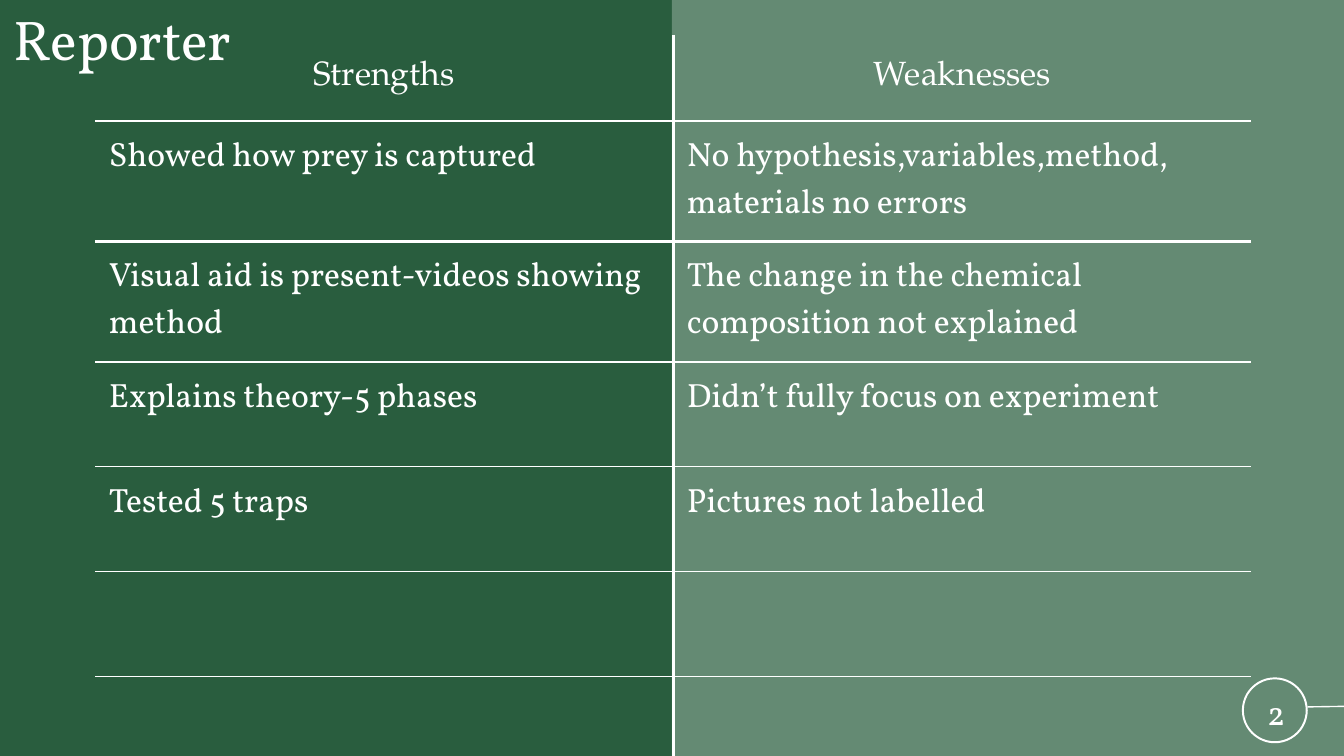
import dataclasses

import pptx
import pptx.dml.color
import pptx.enum.shapes
import pptx.enum.text
import pptx.oxml
import pptx.oxml.ns
import pptx.util

Inches = pptx.util.Inches
Pt = pptx.util.Pt
ALIGN = pptx.enum.text.PP_ALIGN
ANCHOR = pptx.enum.text.MSO_ANCHOR
SHAPE = pptx.enum.shapes.MSO_SHAPE
NAMESPACE = pptx.oxml.ns.nsdecls("a")


@dataclasses.dataclass(frozen=True)
class Theme:
    green: str = "295D3E"
    white: str = "FFFFFF"
    panel_opacity: int = 28
    body_font: str = "Vollkorn"
    header_font: str = "TeX Gyre Pagella"
    title_size: int = 30
    body_size: int = 18
    thin: float = 0.75
    thick: float = 1.5
    inset: float = 0.1


THEME = Theme()

HEADINGS = ("Strengths", "Weaknesses")
FINDINGS = (
    ("Showed how prey is captured", "No hypothesis,variables,method, materials no errors"),
    ("Visual aid is present-videos showing method",
     "The change in the chemical composition not explained"),
    ("Explains theory-5 phases", "Didn’t fully focus on experiment"),
    ("Tested 5 traps", "Pictures not labelled"),
    ("", ""),
    ("", ""),
)
ROW_HEIGHTS = (0.64, 0.49, 0.49, 0.78, 0.78, 0.78, 0.78)
# Width of the rule under each row.
ROW_RULES = (THEME.thick, THEME.thick, *[THEME.thin] * 5)


def color(value):
    return pptx.dml.color.RGBColor.from_string(value)


def set_attributes(target, values):
    for name, value in values.items():
        setattr(target, name, value)


def add_xml(parent, markup):
    parent.append(pptx.oxml.parse_xml(markup))


def paint(shape, value):
    shape.shadow.inherit = False
    shape.fill.solid()
    shape.fill.fore_color.rgb = color(value)
    shape.line.fill.background()


def write(frame, text, font=THEME.body_font, size=THEME.body_size, **para_format):
    para = frame.paragraphs[0]
    set_attributes(para, para_format)
    span = para.add_run()
    span.text = text
    set_attributes(span.font, {"name": font, "size": Pt(size), "bold": False})
    span.font.color.rgb = color(THEME.white)


def set_insets(target):
    sides = ("left", "right", "top", "bottom")
    set_attributes(target, {f"margin_{side}": Inches(THEME.inset) for side in sides})


def add_title(page, left, top, width, height):
    title = page.shapes.title
    set_attributes(title, {"left": Inches(left), "top": Inches(top),
                           "width": Inches(width), "height": Inches(height)})
    frame = title.text_frame
    set_insets(frame)
    set_attributes(frame, {"word_wrap": True, "vertical_anchor": ANCHOR.TOP,
                           "auto_size": pptx.enum.text.MSO_AUTO_SIZE.NONE})
    write(frame, "Reporter", size=THEME.title_size, alignment=ALIGN.LEFT)


def add_panel(page, left, top, width, height):
    panel = page.shapes.add_shape(SHAPE.RECTANGLE, Inches(left), Inches(top),
                                  Inches(width), Inches(height))
    paint(panel, THEME.white)
    tint = panel._element.spPr.find(".//" + pptx.oxml.ns.qn("a:srgbClr"))
    add_xml(tint, f'<a:alpha {NAMESPACE} val="{THEME.panel_opacity * 1000}"/>')


def set_borders(cell, widths):
    """Rule the sides L, R, T and B; a side without a width stays clear."""
    properties = cell._tc.get_or_add_tcPr()
    for side in "LRTB":
        width = widths.get(side)
        paint_markup = "<a:noFill/>"
        if width:
            paint_markup = f'<a:solidFill><a:srgbClr val="{THEME.white}"/></a:solidFill>'
        add_xml(properties, f'<a:ln{side} {NAMESPACE} w="{Pt(width or 0)}">'
                            f'{paint_markup}</a:ln{side}>')


def add_comparison(page, left, top, width):
    rows = (HEADINGS, *FINDINGS)
    table = page.shapes.add_table(len(rows), len(HEADINGS), Inches(left), Inches(top),
                                  Inches(width), Inches(sum(ROW_HEIGHTS))).table
    set_attributes(table, {"first_row": False, "horz_banding": False})
    for index, texts in enumerate(rows):
        table.rows[index].height = Inches(ROW_HEIGHTS[index])
        is_header = index == 0
        for column, text in enumerate(texts):
            cell = table.cell(index, column)
            set_insets(cell)
            cell.vertical_anchor = ANCHOR.MIDDLE if is_header else ANCHOR.TOP
            set_borders(cell, {
                "R" if column == 0 else "L": THEME.thick,
                "T": None if is_header else ROW_RULES[index - 1],
                "B": ROW_RULES[index],
            })
            cell.fill.background()
            if text:
                write(cell.text_frame, text,
                      font=THEME.header_font if is_header else THEME.body_font,
                      alignment=ALIGN.CENTER if is_header else ALIGN.LEFT)


def add_page_number(page, left, top, size):
    badge = page.shapes.add_group_shape()
    ring = badge.shapes.add_shape(SHAPE.DONUT, Inches(left), Inches(top),
                                  Inches(size), Inches(size))
    ring.adjustments[0] = 0.03
    paint(ring, THEME.white)

    label = badge.shapes.add_textbox(Inches(left + 0.09), Inches(top - 0.04),
                                     Inches(0.32), Inches(size))
    set_insets(label.text_frame)
    label.text_frame.word_wrap = True
    write(label.text_frame, "2", alignment=ALIGN.CENTER, line_spacing=1.15, space_after=Pt(16))

    tail = badge.shapes.add_connector(
        pptx.enum.shapes.MSO_CONNECTOR.STRAIGHT,
        Inches(left + size), Inches(top + 0.22), Inches(left + size + 0.64), Inches(top + 0.21))
    tail.line.color.rgb = color(THEME.white)
    tail.line.width = Pt(THEME.thin)
    add_xml(tail._element.spPr, f"<a:effectLst {NAMESPACE}/>")


def main():
    deck = pptx.Presentation()
    set_attributes(deck, {"slide_width": Pt(720), "slide_height": Pt(405)})
    page = deck.slides.add_slide(deck.slide_layouts.get_by_name("Title Only"))
    page.background.fill.solid()
    page.background.fill.fore_color.rgb = color(THEME.green)

    add_title(page, 0, -0.07, 9.32, 0.63)
    add_panel(page, 5, 0, 5.26, 5.63)
    add_comparison(page, 0.71, 0.26, 8.6)
    add_page_number(page, 9.24, 5.04, 0.49)
    deck.save("out.pptx")


if __name__ == "__main__":
    main()
